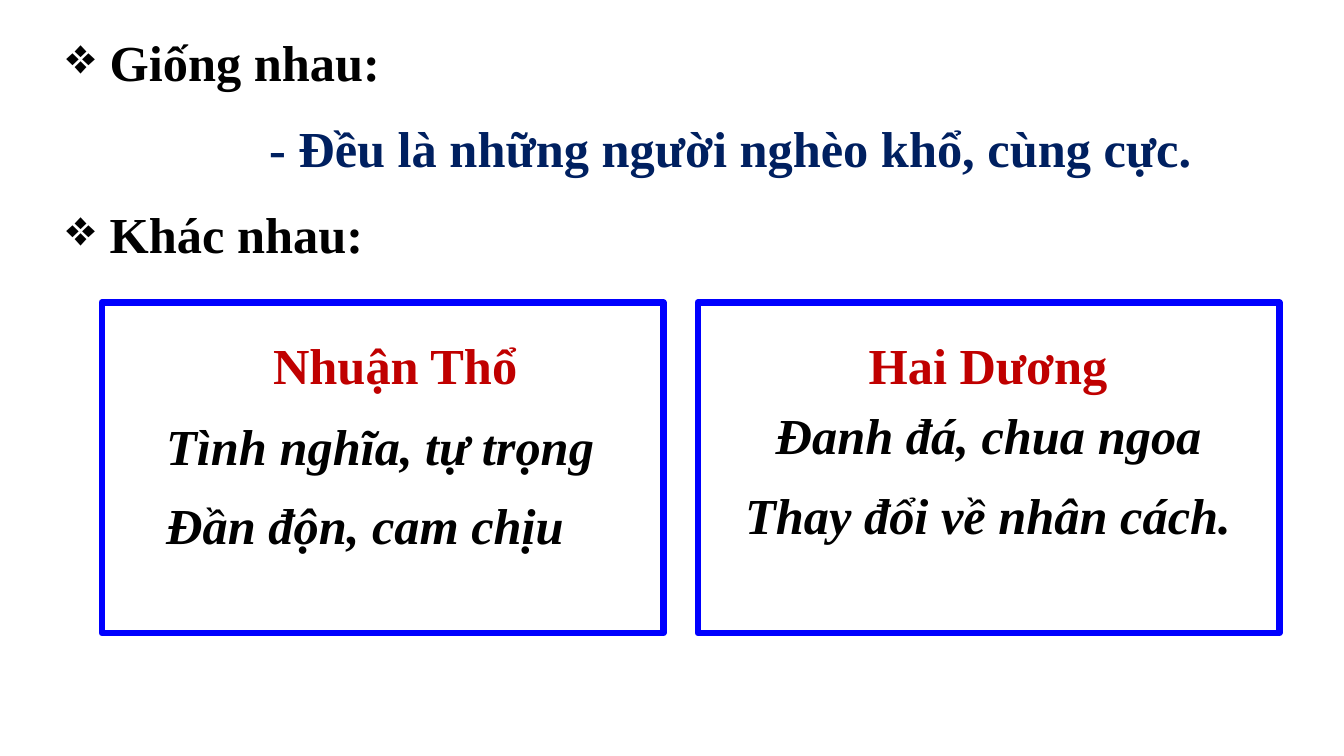
from dataclasses import dataclass

from lxml.etree import SubElement
from pptx import Presentation
from pptx.dml.color import RGBColor
from pptx.enum.shapes import MSO_SHAPE as Shape
from pptx.enum.text import MSO_AUTO_SIZE as AutoSize, PP_ALIGN as Align
from pptx.oxml.ns import qn
from pptx.util import Pt

PX = 9144  # EMU per px, 100 px to the inch


@dataclass(frozen=True)
class Theme:
    font: str = "Times New Roman"
    size: int = 36
    border: float = 4.5
    line_height: int = 71
    bullet_indent: int = 43
    black: str = "000000"
    navy: str = "002060"
    red: str = "C00000"
    blue: str = "0000FF"


class SlideBuilder:
    def __init__(self, slide, theme):
        self.slide = slide
        self.theme = theme

    def frame(self, left, top, width, height):
        box = [length * PX for length in (left, top, width, height)]
        shape = self.slide.shapes.add_shape(Shape.RECTANGLE, *box)
        shape.shadow.inherit = False
        shape.fill.background()
        shape.line.color.rgb = RGBColor.from_string(self.theme.blue)
        shape.line.width = Pt(self.theme.border)

    def text(self, text, left, top, width, color=None, italic=False,
             align=Align.LEFT, bullet=None):
        box = [length * PX for length in (left, top, width, self.theme.line_height)]
        text_frame = self.slide.shapes.add_textbox(*box).text_frame
        text_frame.word_wrap = True
        text_frame.auto_size = AutoSize.SHAPE_TO_FIT_TEXT
        paragraph = text_frame.paragraphs[0]
        paragraph.alignment = align
        run = paragraph.add_run()
        run.text = text
        font = run.font
        font.name = self.theme.font
        font.size = Pt(self.theme.size)
        font.bold = True
        font.italic = italic
        font.color.rgb = RGBColor.from_string(color or self.theme.black)
        if bullet:
            self.add_bullet(paragraph, bullet)

    def add_bullet(self, paragraph, bullet):
        properties = paragraph._p.get_or_add_pPr()
        indent = self.theme.bullet_indent * PX
        properties.set("marL", str(indent))
        properties.set("indent", str(-indent))
        SubElement(properties, qn("a:buChar"), char=bullet)


def main():
    presentation = Presentation()
    presentation.slide_width = 1333 * PX
    presentation.slide_height = 750 * PX
    theme = Theme()
    slide = presentation.slides.add_slide(presentation.slide_layouts[6])
    builder = SlideBuilder(slide, theme)

    # Similarities and differences
    builder.text("Giống nhau:", 56, 26, 544, bullet="❖")
    builder.text("- Đều là những người nghèo khổ, cùng cực.", 257, 111, 1086,
                 color=theme.navy)
    builder.text("Khác nhau:", 56, 197, 492, bullet="❖")

    # Frames of the two characters
    for left, width in ((101, 557), (692, 577)):
        builder.frame(left, 300, width, 328)

    # Character names
    builder.text("Nhuận Thổ", 261, 327, 352, color=theme.red)
    builder.text("Hai Dương", 851, 327, 258, color=theme.red, align=Align.CENTER)

    # Character traits
    for trait, left, top, width, align in (
        ("Tình nghĩa, tự trọng", 155, 407, 512, Align.LEFT),
        ("Đần độn, cam chịu", 155, 485, 477, Align.JUSTIFY),
        ("Đanh đá, chua ngoa", 708, 396, 545, Align.CENTER),
        ("Thay đổi về nhân cách.", 724, 475, 512, Align.CENTER),
    ):
        builder.text(trait, left, top, width, italic=True, align=align)

    presentation.save("out.pptx")


if __name__ == "__main__":
    main()
